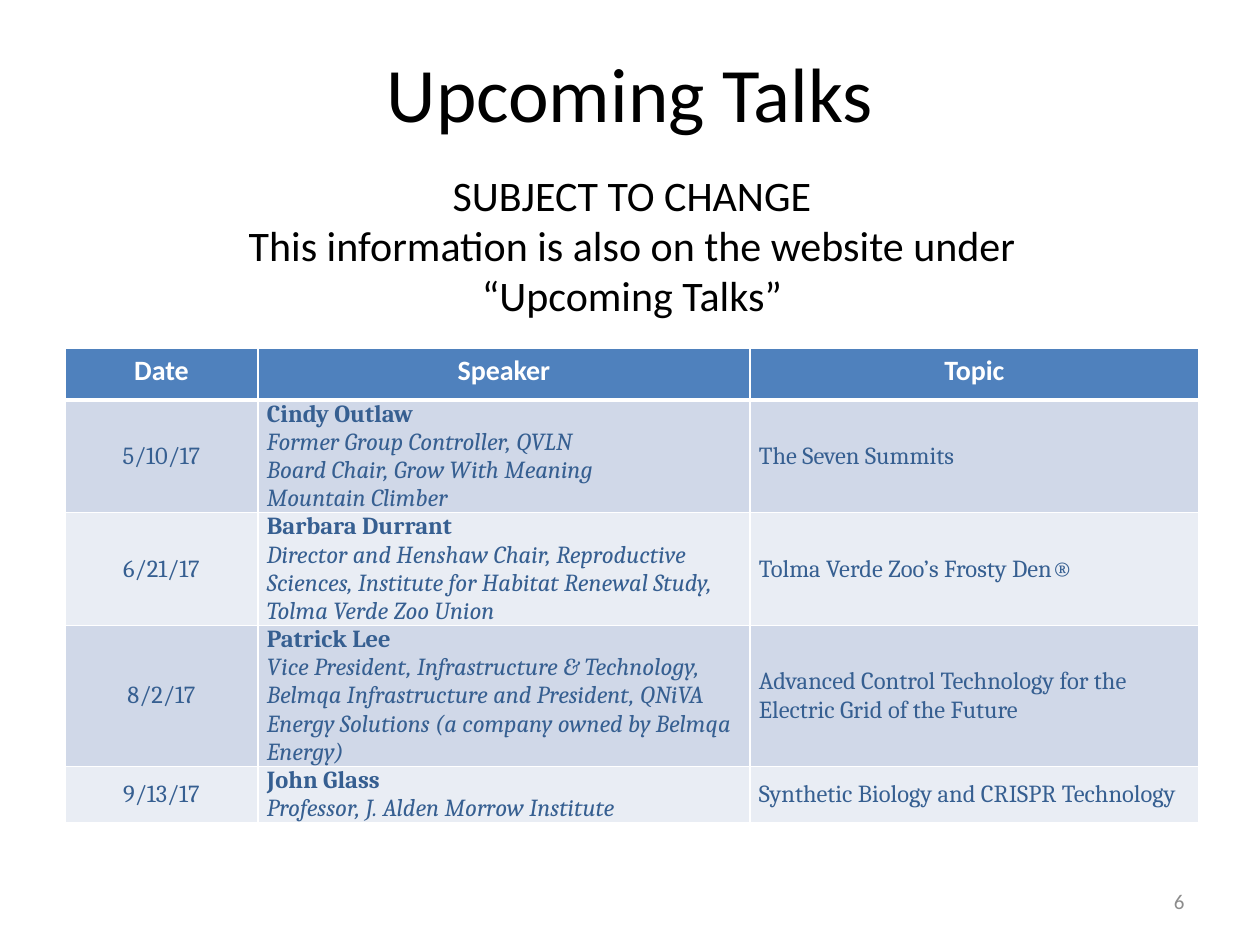
from lxml import etree
from pptx import Presentation
from pptx.dml.color import RGBColor
from pptx.enum.text import MSO_ANCHOR, PP_ALIGN
from pptx.oxml import parse_xml
from pptx.oxml.ns import nsdecls
from pptx.util import Emu, Pt

LEFT, CENTER, RIGHT = PP_ALIGN.LEFT, PP_ALIGN.CENTER, PP_ALIGN.RIGHT
MIDDLE = MSO_ANCHOR.MIDDLE
TOP = MSO_ANCHOR.TOP
EMU_PER_PX = 914400 / 126
TITLE_ONLY = 5

HEADINGS = ["Date", "Speaker", "Topic"]
COLUMN_WIDTHS = [193, 492, 449]
ROW_HEIGHT = 52
BAND_FILLS = ["D0D8E8", "E9EDF4"]
TALKS = [
    ("5/10/17", "Cindy Outlaw",
     ["Former Group Controller, QVLN", "Board Chair, Grow With Meaning", "Mountain Climber"],
     "The Seven Summits"),
    ("6/21/17", "Barbara Durrant",
     ["Director and Henshaw Chair, Reproductive Sciences, "
      "Institute for Habitat Renewal Study, Tolma Verde Zoo Union"],
     "Tolma Verde Zoo’s Frosty Den®"),
    ("8/2/17", "Patrick Lee",
     ["Vice President, Infrastructure & Technology, Belmqa Infrastructure and President, "
      "QNiVA Energy Solutions (a company owned by Belmqa Energy)"],
     "Advanced Control Technology for the Electric Grid of the Future"),
    ("9/13/17", "John Glass",
     ["Professor, J. Alden Morrow Institute"],
     "Synthetic Biology and CRISPR Technology"),
]


def px(length):
    """Turn pixels into EMU."""
    return Emu(round(length * EMU_PER_PX))


def color(hex_code):
    """Turn a hex string into a colour."""
    return RGBColor.from_string(hex_code)


def style(paragraph, size, font_name, hex_code, align=LEFT, bold=False, italic=False):
    """Format one whole paragraph."""
    paragraph.alignment = align
    font = paragraph.font
    font.size, font.name = Pt(size), font_name
    font.bold, font.italic = bold, italic
    font.color.rgb = color(hex_code)


def add_title(slide, heading):
    """Place and format the slide title."""
    title = slide.shapes.title
    title.left, title.top, title.width, title.height = map(px, (0, 13, 1260, 158))
    title.text_frame.text = heading
    title.text_frame.vertical_anchor = MIDDLE
    style(title.text_frame.paragraphs[0], 44, "Calibri", "000000", CENTER)


def add_text(slide, box, lines, size, hex_code, align, anchor=TOP):
    """Add a wrapping text box with one paragraph per line."""
    frame = slide.shapes.add_textbox(*map(px, box)).text_frame
    frame.word_wrap = True
    frame.vertical_anchor = anchor
    frame.text = "\n".join(lines)
    for paragraph in frame.paragraphs:
        style(paragraph, size, "Calibri", hex_code, align)


def fill_cell(cell, lines, fill):
    """Write lines into a cell, fill it and return its paragraphs."""
    cell.fill.solid()
    cell.fill.fore_color.rgb = color(fill)
    cell.text_frame.text = "\n".join(lines)
    return cell.text_frame.paragraphs


def underline_cell(cell, width, hex_code):
    """Draw the bottom border of a cell."""
    border = parse_xml(f'<a:lnB {nsdecls("a")} w="{Pt(width)}"/>')
    fill = etree.SubElement(border, border.tag.replace("lnB", "solidFill"))
    etree.SubElement(fill, border.tag.replace("lnB", "srgbClr"), val=hex_code)
    cell._tc.get_or_add_tcPr().insert(0, border)


def fill_heading_cell(cell, heading):
    """Fill a header cell and rule it off from the body."""
    paragraph = fill_cell(cell, [heading], "4F81BD")[0]
    style(paragraph, 16, "Calibri", "FFFFFF", CENTER, bold=True)
    underline_cell(cell, 3, "FFFFFF")


def fill_talk_cell(cell, lines, fill, align=LEFT, is_speaker=False):
    """Fill a body cell; a speaker has a bold name and italic positions."""
    cell.vertical_anchor = MIDDLE
    cell.margin_left = cell.margin_right = px(9)
    cell.margin_top = cell.margin_bottom = 0
    for index, paragraph in enumerate(fill_cell(cell, lines, fill)):
        style(paragraph, 14, "Cambria", "365F91", align,
              bold=is_speaker and index == 0, italic=is_speaker and index > 0)


def add_schedule(slide):
    """Add the table of talks."""
    row_count = len(TALKS) + 1
    table = slide.shapes.add_table(
        row_count, len(HEADINGS), px(65), px(348),
        px(sum(COLUMN_WIDTHS)), px(ROW_HEIGHT * row_count)).table
    for column, width in zip(table.columns, COLUMN_WIDTHS):
        column.width = px(width)
    for cell, heading in zip(table.rows[0].cells, HEADINGS):
        fill_heading_cell(cell, heading)
    for row, (date, speaker, positions, topic) in enumerate(TALKS, start=1):
        fill = BAND_FILLS[(row - 1) % 2]
        fill_talk_cell(table.cell(row, 0), [date], fill, CENTER)
        fill_talk_cell(table.cell(row, 1), [speaker, *positions], fill, is_speaker=True)
        fill_talk_cell(table.cell(row, 2), [topic], fill)


def main():
    """Build the upcoming talks slide."""
    presentation = Presentation()
    presentation.slide_width, presentation.slide_height = px(1260), px(945)
    slide = presentation.slides.add_slide(presentation.slide_layouts[TITLE_ONLY])
    add_title(slide, "Upcoming Talks")
    add_schedule(slide)
    add_text(slide, (65, 163, 1134, 165),
             ["SUBJECT TO CHANGE", "This information is also on the website under",
              "“Upcoming Talks”"], 24, "000000", CENTER)
    add_text(slide, (903, 876, 294, 50), ["6"], 12, "8C8C8C", RIGHT, MIDDLE)
    presentation.save("out.pptx")


if __name__ == "__main__":
    main()
